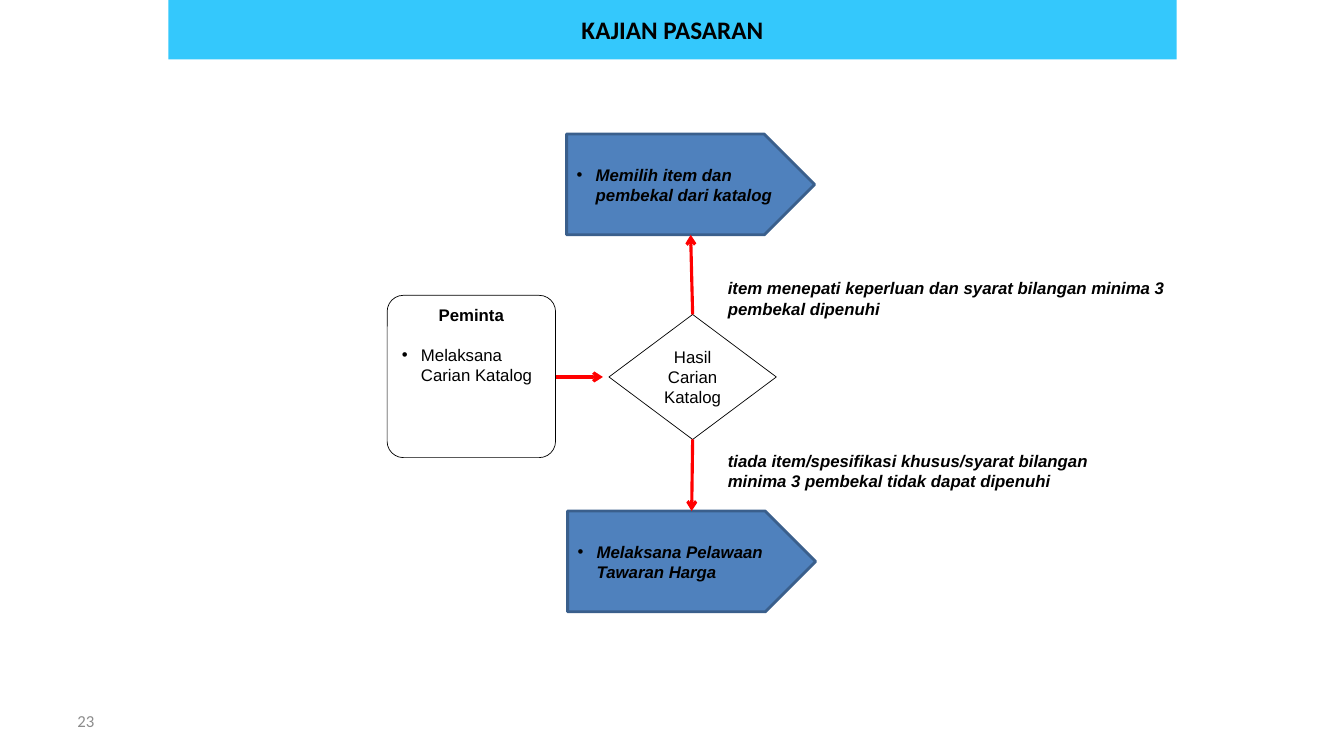
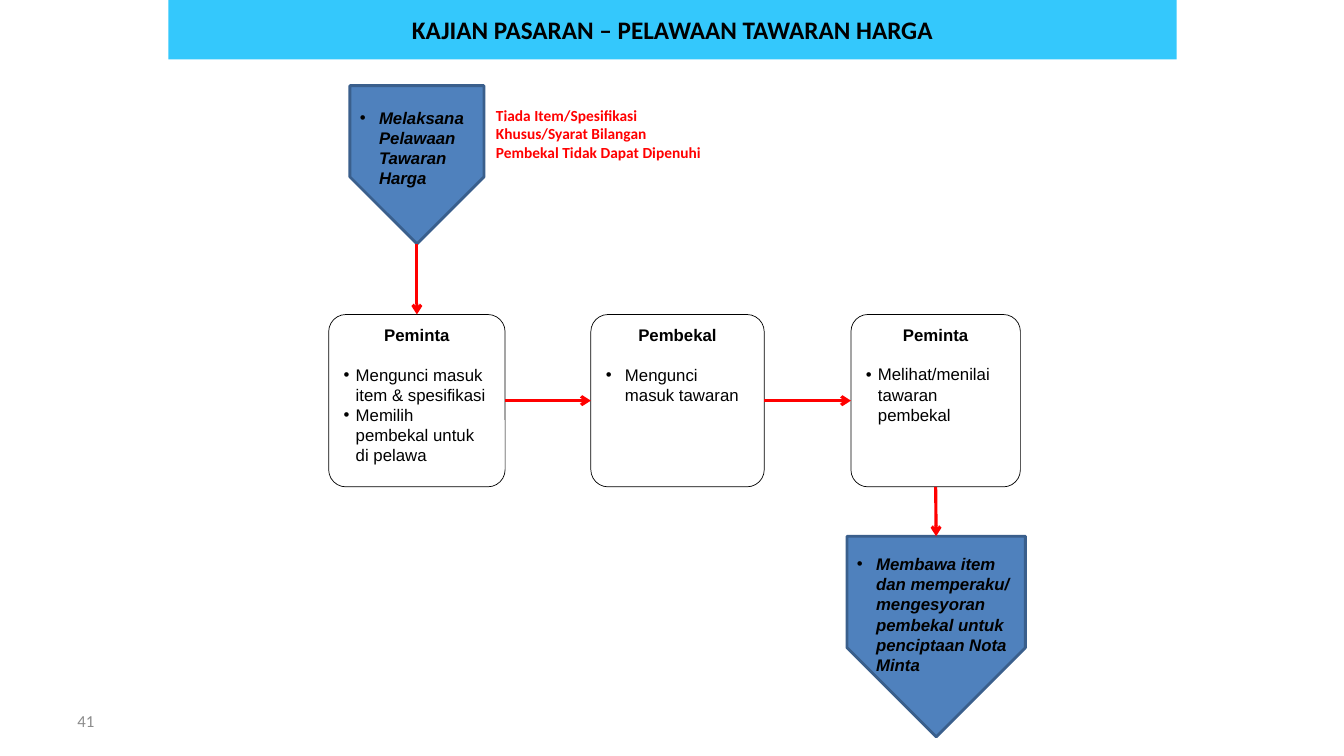
from lxml.etree import SubElement
from pptx import Presentation
from pptx.dml.color import RGBColor
from pptx.enum.shapes import MSO_CONNECTOR, MSO_SHAPE
from pptx.enum.text import MSO_ANCHOR, PP_ALIGN
from pptx.oxml.ns import qn
from pptx.util import Inches, Pt

BLACK = RGBColor(0x00, 0x00, 0x00)
WHITE = RGBColor(0xFF, 0xFF, 0xFF)
RED = RGBColor(0xFF, 0x00, 0x00)
GREY = RGBColor(0x8C, 0x8C, 0x8C)
SKY = RGBColor(0x34, 0xC8, 0xFC)
BLUE = RGBColor(0x4F, 0x81, 0xBD)
NAVY = RGBColor(0x3A, 0x5F, 0x8C)

BAND_FRAME = (1.67, 0, 10, 0.59)
NUMBER_FRAME = (0.67, 6.95, 3.11, 0.4)
WIDE_INDENT = 0.19
NARROW_INDENT = 0.12
CONDITION = {"bold": True, "italic": True}
REASON = {"font": "Calibri", "size": 11, "color": RED, "bold": True}

# Frames are (left, top, width, height) in inches, as seen on the slide.
# Links are (from node, side, to node, side, gap before the arrow tip).
SLIDES = [
    {
        "title": "KAJIAN PASARAN",
        "number": "23",
        "cards": {
            "search": ((3.84, 2.93, 1.67, 1.61), "Peminta",
                       ["Melaksana Carian Katalog"], WIDE_INDENT),
        },
        "decisions": {
            "result": ((6.04, 3.12, 1.66, 1.24), "Hasil Carian Katalog"),
        },
        "pentagons": {
            "choose": ((5.62, 1.33, 2.46, 1), "Memilih item dan pembekal dari katalog", False),
            "invite": ((5.63, 5.07, 2.46, 1), "Melaksana Pelawaan Tawaran Harga", False),
        },
        "labels": [
            ((7.12, 2.71, 4.55, 0.5),
             "item menepati keperluan dan syarat bilangan minima 3 pembekal dipenuhi", CONDITION),
            ((7.12, 4.42, 4.05, 0.71),
             "tiada item/spesifikasi khusus/syarat bilangan minima 3 pembekal tidak dapat dipenuhi",
             CONDITION),
        ],
        "links": [
            ("search", "right", "result", "left", 0.06),
            ("result", "top", "choose", "bottom", 0),
            ("result", "bottom", "invite", "top", 0),
        ],
    },
    {
        "title": "KAJIAN PASARAN – PELAWAAN TAWARAN HARGA",
        "number": "41",
        "cards": {
            "request": ((3.26, 3.12, 1.75, 1.71), "Peminta",
                        ["Mengunci masuk item & spesifikasi",
                         "Memilih pembekal untuk di pelawa"], NARROW_INDENT),
            "offer": ((5.86, 3.12, 1.72, 1.71), "Pembekal",
                      ["Mengunci masuk tawaran"], WIDE_INDENT),
            "review": ((8.44, 3.12, 1.68, 1.71), "Peminta",
                       ["Melihat/menilai tawaran pembekal"], NARROW_INDENT),
        },
        "decisions": {},
        "pentagons": {
            "invite": ((3.47, 0.85, 1.33, 1.57), "Melaksana Pelawaan Tawaran Harga", True),
            "endorse": ((8.4, 5.32, 1.77, 1.99),
                        "Membawa item dan memperaku/ mengesyoran pembekal untuk "
                        "penciptaan Nota Minta", True),
        },
        "labels": [
            ((4.82, 1, 2.25, 0.84),
             "Tiada Item/Spesifikasi Khusus/Syarat Bilangan Pembekal Tidak Dapat Dipenuhi", REASON),
        ],
        "links": [
            ("invite", "bottom", "request", "top", 0),
            ("request", "right", "offer", "left", 0),
            ("offer", "right", "review", "left", 0),
            ("review", "bottom", "endorse", "top", 0),
        ],
    },
]


def write(text_frame, text, *, font="Arial", size=12, color=BLACK, bold=False, italic=False,
          align=PP_ALIGN.LEFT, indent=0, after=0, new=False):
    """Fill the first paragraph, or a new one; an indent makes it a bullet."""
    para = text_frame.add_paragraph() if new else text_frame.paragraphs[0]
    if indent:
        props = para._p.get_or_add_pPr()
        props.set("marL", str(Inches(indent)))
        props.set("indent", str(-Inches(indent)))
        SubElement(props, qn("a:buFont")).set("typeface", "Arial")
        SubElement(props, qn("a:buChar")).set("char", "•")
    para.alignment = align
    para.space_after = Pt(after)
    span = para.add_run()
    span.text = text
    span.font.name, span.font.size = font, Pt(size)
    span.font.bold, span.font.italic = bold, italic
    span.font.color.rgb = color


def add_box(page, kind, frame, fill, line=None, width=0.5, anchor=MSO_ANCHOR.MIDDLE):
    box = page.shapes.add_shape(kind, *map(Inches, frame))
    box.shadow.inherit = False
    box.fill.solid()
    box.fill.fore_color.rgb = fill
    if line is None:
        box.line.fill.background()
    else:
        box.line.color.rgb = line
        box.line.width = Pt(width)
    box.text_frame.word_wrap = True
    box.text_frame.vertical_anchor = anchor
    return box


def add_label(page, frame, text, anchor=MSO_ANCHOR.TOP, **style):
    box = page.shapes.add_textbox(*map(Inches, frame))
    box.text_frame.word_wrap = True
    box.text_frame.vertical_anchor = anchor
    write(box.text_frame, text, **style)


def add_card(page, frame, heading, items, indent):
    card = add_box(page, MSO_SHAPE.ROUNDED_RECTANGLE, frame, WHITE, BLACK, anchor=MSO_ANCHOR.TOP)
    card.adjustments[0] = 0.1
    write(card.text_frame, heading, bold=True, align=PP_ALIGN.CENTER, after=14)
    for item in items:
        write(card.text_frame, item, indent=indent, new=True)


def add_pentagon(page, frame, text, points_down):
    """Turn the shape a quarter for a downward tip while its text stays upright."""
    if points_down:
        left, top, width, height = frame
        shift = (height - width) / 2
        frame = (left - shift, top + shift, height, width)
    box = add_box(page, MSO_SHAPE.PENTAGON, frame, BLUE, NAVY, 2)
    if points_down:
        box.rotation = 90
        box.element.find(".//" + qn("a:bodyPr")).set("vert", "vert270")
    write(box.text_frame, text, bold=True, italic=True, indent=WIDE_INDENT)


def side_point(frame, side):
    left, top, width, height = frame
    across, down = {"left": (0, 0.5), "right": (1, 0.5),
                    "top": (0.5, 0), "bottom": (0.5, 1)}[side]
    return left + across * width, top + down * height


def add_arrow(page, start, end):
    arrow = page.shapes.add_connector(MSO_CONNECTOR.STRAIGHT, *map(Inches, start + end))
    arrow.line.color.rgb = RED
    arrow.line.width = Pt(2.25)
    SubElement(arrow.line._get_or_add_ln(), qn("a:tailEnd")).set("type", "arrow")
    SubElement(arrow.element.spPr, qn("a:effectLst"))


def add_page(deck, content):
    page = deck.slides.add_slide(deck.slide_layouts[6])
    band = add_box(page, MSO_SHAPE.RECTANGLE, BAND_FRAME, SKY)
    write(band.text_frame, content["title"], font="Calibri", size=18, bold=True,
          align=PP_ALIGN.CENTER)
    add_label(page, NUMBER_FRAME, content["number"], MSO_ANCHOR.MIDDLE,
              font="Calibri", color=GREY)
    for card in content["cards"].values():
        add_card(page, *card)
    for frame, text in content["decisions"].values():
        box = add_box(page, MSO_SHAPE.FLOWCHART_DECISION, frame, WHITE, BLACK)
        write(box.text_frame, text, align=PP_ALIGN.CENTER)
    for pentagon in content["pentagons"].values():
        add_pentagon(page, *pentagon)
    for frame, text, style in content["labels"]:
        add_label(page, frame, text, **style)

    nodes = content["cards"] | content["decisions"] | content["pentagons"]
    for source, source_side, target, target_side, gap in content["links"]:
        start = side_point(nodes[source][0], source_side)
        x, y = side_point(nodes[target][0], target_side)
        if target_side == "left":
            start = (start[0], y)
        add_arrow(page, start, (x - gap, y))


def main():
    deck = Presentation()
    deck.slide_width, deck.slide_height = Inches(13.33), Inches(7.5)
    for content in SLIDES:
        add_page(deck, content)
    deck.save("out.pptx")


if __name__ == "__main__":
    main()
